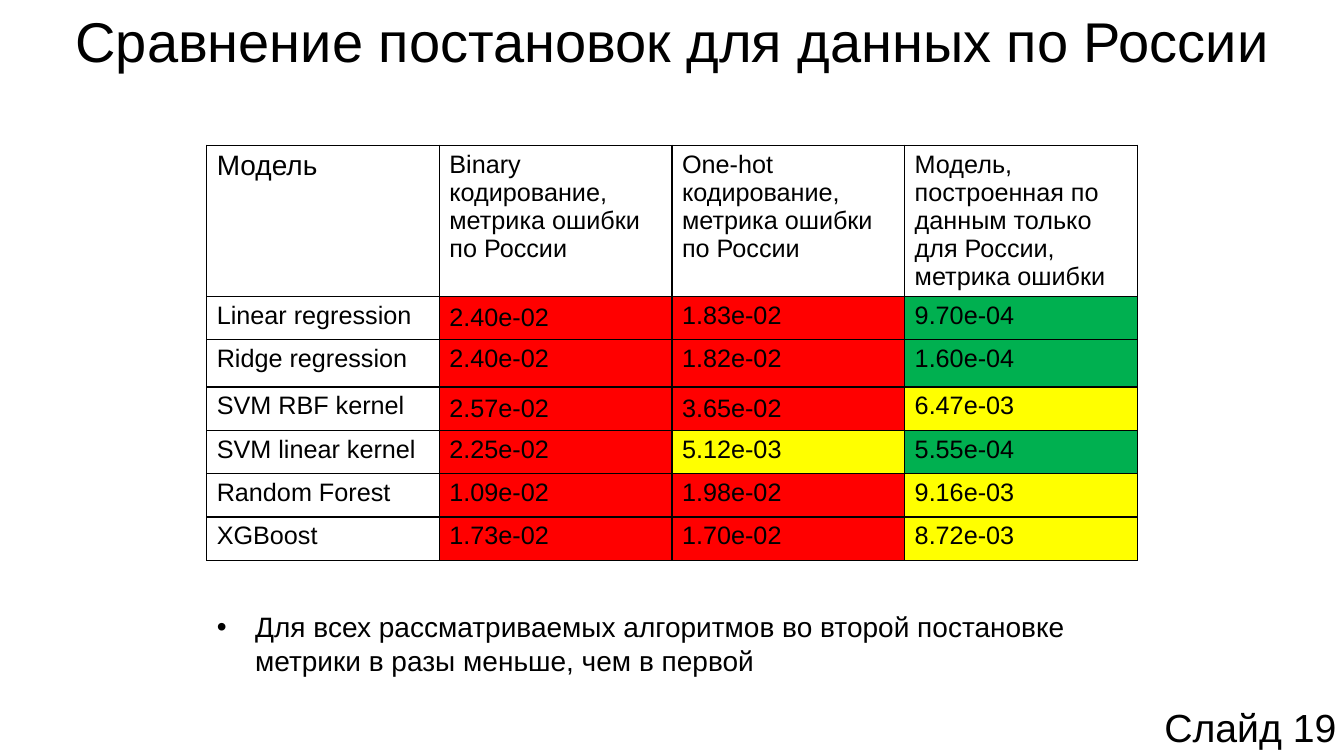
from lxml import etree
from pptx import Presentation
from pptx.dml.color import RGBColor
from pptx.enum.text import MSO_ANCHOR, MSO_AUTO_SIZE, PP_ALIGN
from pptx.oxml.ns import qn
from pptx.util import Inches, Pt

TOP, MIDDLE, BOTTOM = MSO_ANCHOR.TOP, MSO_ANCHOR.MIDDLE, MSO_ANCHOR.BOTTOM
CENTER, LEFT = PP_ALIGN.CENTER, PP_ALIGN.LEFT
NO_AUTOFIT = MSO_AUTO_SIZE.NONE
BLACK, WHITE, RED, YELLOW, GREEN = "000000", "FFFFFF", "FF0000", "FFFF00", "00B050"
GOOD_LIMIT, FAIR_LIMIT = 0.005, 0.01


def color(value):
    return RGBColor.from_string(value)


def write(text_frame, text, size, anchor=TOP, alignment=LEFT):
    text_frame.vertical_anchor = anchor
    paragraph = text_frame.paragraphs[0]
    paragraph.alignment = alignment
    run = paragraph.add_run()
    run.text = text
    run.font.size = Pt(size)
    run.font.name = "Arial"
    run.font.color.rgb = color(BLACK)
    return paragraph


presentation = Presentation()
presentation.slide_width = Inches(13.33)
presentation.slide_height = Inches(7.5)
slide = presentation.slides.add_slide(presentation.slide_layouts[1])
table_left, table_width = Inches(2.05), Inches(9.23)

title = slide.shapes.title
title.left, title.top = 0, 0
title.width, title.height = presentation.slide_width, Inches(0.79)
title.text_frame.auto_size = NO_AUTOFIT
heading = write(title.text_frame, "Сравнение постановок для данных по России", 40, BOTTOM, CENTER)
heading.line_spacing = 0.9

headers = [
    "Модель",
    "Binary кодирование, метрика ошибки по России",
    "One-hot кодирование, метрика ошибки по России",
    "Модель, построенная по данным только для России, метрика ошибки",
]
results = [
    ["Linear regression", "2.40e-02", "1.83e-02", "9.70e-04"],
    ["Ridge regression", "2.40e-02", "1.82e-02", "1.60e-04"],
    ["SVM RBF kernel", "2.57e-02", "3.65e-02", "6.47e-03"],
    ["SVM linear kernel", "2.25e-02", "5.12e-03", "5.55e-04"],
    ["Random Forest", "1.09e-02", "1.98e-02", "9.16e-03"],
    ["XGBoost", "1.73e-02", "1.70e-02", "8.72e-03"],
]
row_heights = [1.5, 0.43, 0.47, 0.43, 0.43, 0.43, 0.43]
middle_cells = {(1, 1), (3, 1), (3, 2)}

table_shape = slide.shapes.add_table(
    len(row_heights), len(headers), table_left, Inches(1.44), table_width, Inches(sum(row_heights))
)
table = table_shape.table
table.first_row = False
table.horz_banding = False
for row, height in zip(table.rows, row_heights):
    row.height = Inches(height)

for row_index, values in enumerate([headers] + results):
    for column_index, text in enumerate(values):
        cell = table.cell(row_index, column_index)
        anchor = MIDDLE if (row_index, column_index) in middle_cells else TOP
        write(cell.text_frame, text, 20 if row_index == column_index == 0 else 18)
        cell.vertical_anchor = anchor

        fill_color = WHITE
        if row_index and column_index:
            error = float(text)
            fill_color = GREEN if error < GOOD_LIMIT else YELLOW if error < FAIR_LIMIT else RED

        properties = cell._tc.get_or_add_tcPr()
        for side in ("a:lnL", "a:lnR", "a:lnT", "a:lnB"):
            border = etree.SubElement(properties, qn(side), w=str(Pt(1)))
            border_fill = etree.SubElement(border, qn("a:solidFill"))
            etree.SubElement(border_fill, qn("a:srgbClr"), val=BLACK)
        cell.fill.solid()
        cell.fill.fore_color.rgb = color(fill_color)

conclusion = slide.placeholders[1]
conclusion.left, conclusion.top = table_left, Inches(6)
conclusion.width, conclusion.height = Inches(9.39), Inches(0.77)
conclusion.text_frame.auto_size = NO_AUTOFIT
bullet = write(
    conclusion.text_frame,
    "Для всех рассматриваемых алгоритмов во второй постановке метрики в разы меньше, чем в первой",
    20,
)
bullet.space_before = Pt(0)
bullet_properties = bullet._p.get_or_add_pPr()
bullet_properties.set("marL", str(Inches(0.38)))
bullet_properties.set("indent", str(Inches(-0.38)))
etree.SubElement(bullet_properties, qn("a:buFont"), typeface="Arial")
etree.SubElement(bullet_properties, qn("a:buChar"), char="•")

slide_label = slide.shapes.add_textbox(Inches(11.45), Inches(6.93), Inches(1.93), Inches(0.57))
slide_label.text_frame.word_wrap = False
write(slide_label.text_frame, "Слайд 19", 28)

presentation.save("out.pptx")
